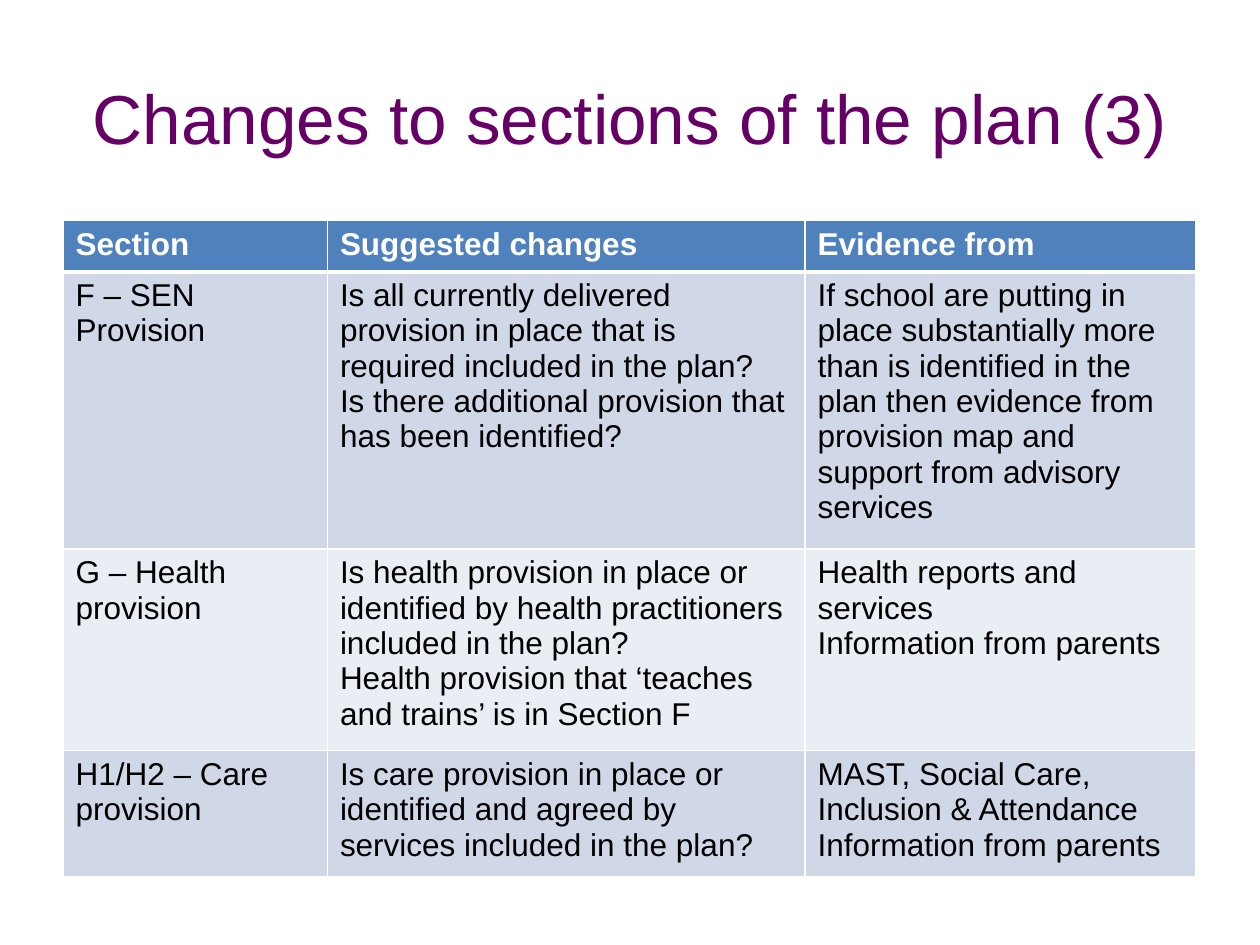
from lxml.etree import SubElement
from pptx import Presentation
from pptx.dml.color import RGBColor
from pptx.enum.text import MSO_ANCHOR as Anchor, PP_ALIGN as Align
from pptx.oxml.ns import qn
from pptx.util import Cm, Pt

COLUMN_WIDTHS = [5.33, 9.63, 7.87]
ROW_HEIGHT = 1.03
ROWS = [
    ["Section", "Suggested changes", "Evidence from"],
    [
        "F – SEN Provision",
        "Is all currently delivered provision in place that is required included in the plan?\n"
        "Is there additional provision that has been identified?",
        "If school are putting in place substantially more than is identified in the plan "
        "then evidence from provision map and support from advisory services",
    ],
    [
        "G – Health provision",
        "Is health provision in place or identified by health practitioners included in the plan?\n"
        "Health provision that ‘teaches and trains’ is in Section F",
        "Health reports and services\nInformation from parents",
    ],
    [
        "H1/H2 – Care provision",
        "Is care provision in place or identified and agreed by services included in the plan?",
        "MAST, Social Care, Inclusion & Attendance\nInformation from parents",
    ],
]


def color(value):
    return RGBColor.from_string(value)


def format_text(frame, size, value, bold=False):
    for para in frame.paragraphs:
        for span in para.runs:
            span.font.name = "Arial"
            span.font.size = Pt(size)
            span.font.bold = bold
            span.font.color.rgb = color(value)


def add_title(page, text):
    box = page.shapes.add_textbox(Cm(1.27), Cm(0.76), Cm(22.86), Cm(3.18))
    frame = box.text_frame
    frame.word_wrap = True
    frame.vertical_anchor = Anchor.MIDDLE
    frame.text = text
    frame.paragraphs[0].alignment = Align.CENTER
    format_text(frame, 39.6, "660066")


def set_borders(cell, value, bottom_width):
    properties = cell._tc.get_or_add_tcPr()
    widths = {"a:lnL": 1, "a:lnR": 1, "a:lnT": 1, "a:lnB": bottom_width}
    for position, (tag, width) in enumerate(widths.items()):
        line = SubElement(properties, qn(tag), w=str(Pt(width)))
        fill = SubElement(line, qn("a:solidFill"))
        SubElement(fill, qn("a:srgbClr"), val=value)
        properties.insert(position, line)


def fill_cell(cell, text, fill, text_color, header):
    cell.text_frame.text = text
    format_text(cell.text_frame, 18, text_color, header)
    cell.fill.solid()
    cell.fill.fore_color.rgb = color(fill)
    set_borders(cell, "FFFFFF", 3 if header else 1)


def add_plan_table(page):
    frame = page.shapes.add_table(
        len(ROWS), len(COLUMN_WIDTHS), Cm(1.27), Cm(4.45),
        Cm(sum(COLUMN_WIDTHS)), Cm(ROW_HEIGHT * len(ROWS)),
    )
    table = frame.table
    for column, width in zip(table.columns, COLUMN_WIDTHS):
        column.width = Cm(width)
    for index, texts in enumerate(ROWS):
        header = index == 0
        band = "D0D8E8" if index % 2 else "E9EDF4"
        fill = "4F81BD" if header else band
        text_color = "FFFFFF" if header else "000000"
        for cell, text in zip(table.rows[index].cells, texts):
            fill_cell(cell, text, fill, text_color, header)


def main():
    deck = Presentation()
    deck.slide_width, deck.slide_height = Cm(25.4), Cm(19.05)
    page = deck.slides.add_slide(deck.slide_layouts[6])
    add_title(page, "Changes to sections of the plan (3)")
    add_plan_table(page)
    deck.save("out.pptx")


if __name__ == "__main__":
    main()
